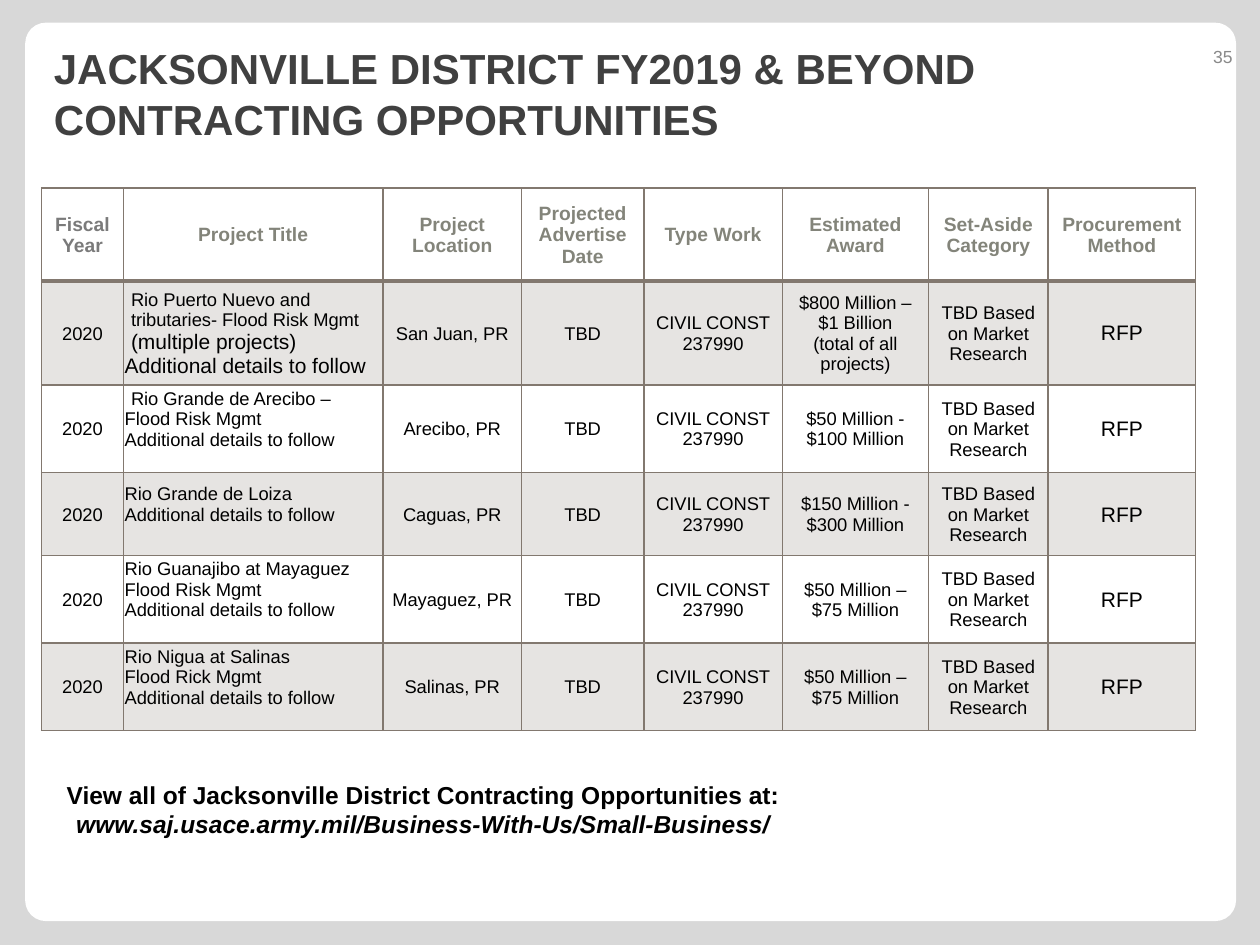
from dataclasses import dataclass
from typing import NamedTuple

from lxml import etree
from pptx import Presentation
from pptx.dml.color import RGBColor
from pptx.enum.shapes import MSO_SHAPE
from pptx.enum.text import MSO_ANCHOR, PP_ALIGN
from pptx.oxml.ns import qn
from pptx.util import Emu, Inches, Pt

LEFT, CENTER, RIGHT = PP_ALIGN.LEFT, PP_ALIGN.CENTER, PP_ALIGN.RIGHT
TOP, MIDDLE = MSO_ANCHOR.TOP, MSO_ANCHOR.MIDDLE
ROUNDED = MSO_SHAPE.ROUNDED_RECTANGLE

WHITE = RGBColor(0xFF, 0xFF, 0xFF)
BLACK = RGBColor(0x00, 0x00, 0x00)
BACKDROP = RGBColor(0xD8, 0xD8, 0xD8)
HEADING = RGBColor(0x40, 0x40, 0x40)
PAGE_NUMBER = RGBColor(0x89, 0x89, 0x89)
YEAR_HEADER = RGBColor(0x7A, 0x7A, 0x7A)
HEADER = RGBColor(0x83, 0x84, 0x7A)
TAUPE = RGBColor(0x82, 0x78, 0x6F)

FONT = "Arial"
SLIDE_WIDTH, SLIDE_HEIGHT = Inches(10), Inches(7.5)
BAND_OPACITY = 20  # percent
BODY_SIZE, LARGE_SIZE = 10.5, 12
SPACE = 0.05  # inches, a slight indent
TITLE_LIFT = 0.16  # inches below short project titles

# Shares of the slide, in percent
COLUMN_SHARES = (6.5, 20.6, 11, 9.7, 11, 11.6, 9.5, 11.7)
ROW_SHARES = (9.87, 11, 8.8, 8.8, 8.8, 8.8)
TITLE_COLUMN, METHOD_COLUMN = 1, 7

HEADERS = ("Fiscal Year", "Project Title", "Project Location", "Projected Advertise Date",
           "Type Work", "Estimated Award", "Set-Aside Category", "Procurement Method")
FOLLOW_UP = "Additional details to follow"


class Area(NamedTuple):
    """A rectangle in percent of the slide's width and height."""
    left: float
    top: float
    width: float
    height: float

    def lengths(self) -> tuple[Emu, Emu, Emu, Emu]:
        return (across(self.left), down(self.top), across(self.width), down(self.height))


@dataclass(frozen=True)
class Line:
    text: str
    size: float = BODY_SIZE
    color: RGBColor = BLACK
    bold: bool = False
    italic: bool = False
    align: PP_ALIGN = CENTER
    indent: float = 0


@dataclass(frozen=True)
class Project:
    title: tuple[Line, ...]
    location: str
    award: tuple[str, ...]
    lift: float = TITLE_LIFT

    def cells(self) -> list[tuple[Line, ...]]:
        return [(Line("2020"),), self.title, (Line(self.location),), (Line("TBD"),),
                (Line("CIVIL CONST 237990"),), tuple(Line(text) for text in self.award),
                (Line("TBD Based on Market Research"),), (Line("RFP", LARGE_SIZE),)]


def title_line(text: str, size: float = BODY_SIZE, indent: float = 0) -> Line:
    return Line(text, size, align=LEFT, indent=indent)


PROJECTS = (
    Project((title_line("Rio Puerto Nuevo and", indent=SPACE),
             title_line("tributaries- Flood Risk Mgmt", indent=SPACE),
             title_line("(multiple projects)", LARGE_SIZE, SPACE),
             title_line(FOLLOW_UP, LARGE_SIZE)),
            "San Juan, PR", ("$800 Million –", "$1 Billion", "(total of all projects)"), lift=0),
    Project((title_line("Rio Grande de Arecibo – Flood Risk Mgmt", indent=SPACE),
             title_line(FOLLOW_UP)), "Arecibo, PR", ("$50 Million - $100 Million",)),
    Project((title_line("Rio Grande de Loiza"), title_line(FOLLOW_UP)),
            "Caguas, PR", ("$150 Million - $300 Million",)),
    Project((title_line("Rio Guanajibo at Mayaguez"), title_line("Flood Risk Mgmt"),
             title_line(FOLLOW_UP)), "Mayaguez, PR", ("$50 Million –", "$75 Million")),
    Project((title_line("Rio Nigua at Salinas"), title_line("Flood Rick Mgmt"),
             title_line(FOLLOW_UP)), "Salinas, PR", ("$50 Million –", "$75 Million")),
)


def across(share: float) -> Emu:
    return Emu(round(SLIDE_WIDTH * share / 100))


def down(share: float) -> Emu:
    return Emu(round(SLIDE_HEIGHT * share / 100))


def write_lines(frame, lines: tuple[Line, ...]) -> None:
    for index, line in enumerate(lines):
        para = frame.paragraphs[0] if index == 0 else frame.add_paragraph()
        para.alignment = line.align
        if line.indent:
            para._p.get_or_add_pPr().set("indent", str(Inches(line.indent)))
        span = para.add_run()
        span.text = line.text
        formats = {"name": FONT, "size": Pt(line.size), "bold": line.bold, "italic": line.italic}
        for name, value in formats.items():
            setattr(span.font, name, value)
        span.font.color.rgb = line.color


def add_text(page, area: Area, lines: tuple[Line, ...], anchor: MSO_ANCHOR = MIDDLE) -> None:
    frame = page.shapes.add_textbox(*area.lengths()).text_frame
    frame.word_wrap = True
    frame.vertical_anchor = anchor
    write_lines(frame, lines)


def add_panel(page, area: Area) -> None:
    panel = page.shapes.add_shape(ROUNDED, *area.lengths())
    panel.adjustments[0] = 0.023
    panel.shadow.inherit = False
    panel.fill.solid()
    panel.fill.fore_color.rgb = WHITE
    panel.line.fill.background()


def set_borders(cell, widths: dict[str, float]) -> None:
    properties = cell._tc.get_or_add_tcPr()
    for side, width in widths.items():
        border = etree.SubElement(properties, qn(f"a:ln{side}"), w=str(Pt(width)))
        paint = etree.SubElement(border, qn("a:solidFill"))
        etree.SubElement(paint, qn("a:srgbClr"), val=str(TAUPE))


def fill_band(cell) -> None:
    cell.fill.solid()
    cell.fill.fore_color.rgb = TAUPE
    color = cell._tc.tcPr.find(qn("a:solidFill")).find(qn("a:srgbClr"))
    etree.SubElement(color, qn("a:alpha"), val=str(BAND_OPACITY * 1000))


def format_cell(cell, row: int, lines: tuple[Line, ...], lift: float) -> None:
    margin = Inches(0.01)
    formats = {"margin_left": margin, "margin_top": margin, "margin_right": margin,
               "margin_bottom": Inches(lift), "vertical_anchor": MIDDLE}
    for name, value in formats.items():
        setattr(cell, name, value)
    set_borders(cell, {"L": 1, "R": 1, "T": 2 if row == 1 else 1, "B": 2 if row == 0 else 1})
    if row % 2:
        fill_band(cell)
    else:
        cell.fill.background()
    write_lines(cell.text_frame, lines)


def add_project_table(page, left: float, top: float) -> None:
    area = Area(left, top, sum(COLUMN_SHARES), sum(ROW_SHARES))
    table = page.shapes.add_table(len(ROW_SHARES), len(COLUMN_SHARES), *area.lengths()).table
    table.horz_banding = False
    for column, share in zip(table.columns, COLUMN_SHARES):
        column.width = across(share)
    for row, share in zip(table.rows, ROW_SHARES):
        row.height = down(share)
    for column, text in enumerate(HEADERS):
        color = HEADER if column else YEAR_HEADER
        format_cell(table.cell(0, column), 0, (Line(text, 11, color, bold=True),), 0)
    for row, project in enumerate(PROJECTS, start=1):
        for column, lines in enumerate(project.cells()):
            lift = project.lift if column == TITLE_COLUMN else 0
            format_cell(table.cell(row, column), row, lines, lift)


def main() -> None:
    deck = Presentation()
    deck.slide_width, deck.slide_height = SLIDE_WIDTH, SLIDE_HEIGHT
    page = deck.slides.add_slide(deck.slide_layouts[6])
    page.background.fill.solid()
    page.background.fill.fore_color.rgb = BACKDROP
    add_panel(page, Area(2, 2.4, 96.1, 95.07))
    heading = "JACKSONVILLE DISTRICT FY2019 & BEYOND CONTRACTING OPPORTUNITIES"
    add_text(page, Area(3.3, 4, 91.7, 11.73), (Line(heading, 24, HEADING, bold=True, align=LEFT),))
    add_text(page, Area(90.8, 3.33, 8, 5.33), (Line("35", 10, PAGE_NUMBER, align=RIGHT),))
    add_project_table(page, 3.3, 19.87)
    add_text(page, Area(-2.6, 81.87, 72.4, 7.6), (
        Line("View all of Jacksonville District Contracting Opportunities at:", 14, bold=True),
        Line("www.saj.usace.army.mil/Business-With-Us/Small-Business/", 14, bold=True, italic=True),
    ), TOP)
    deck.save("out.pptx")


if __name__ == "__main__":
    main()
